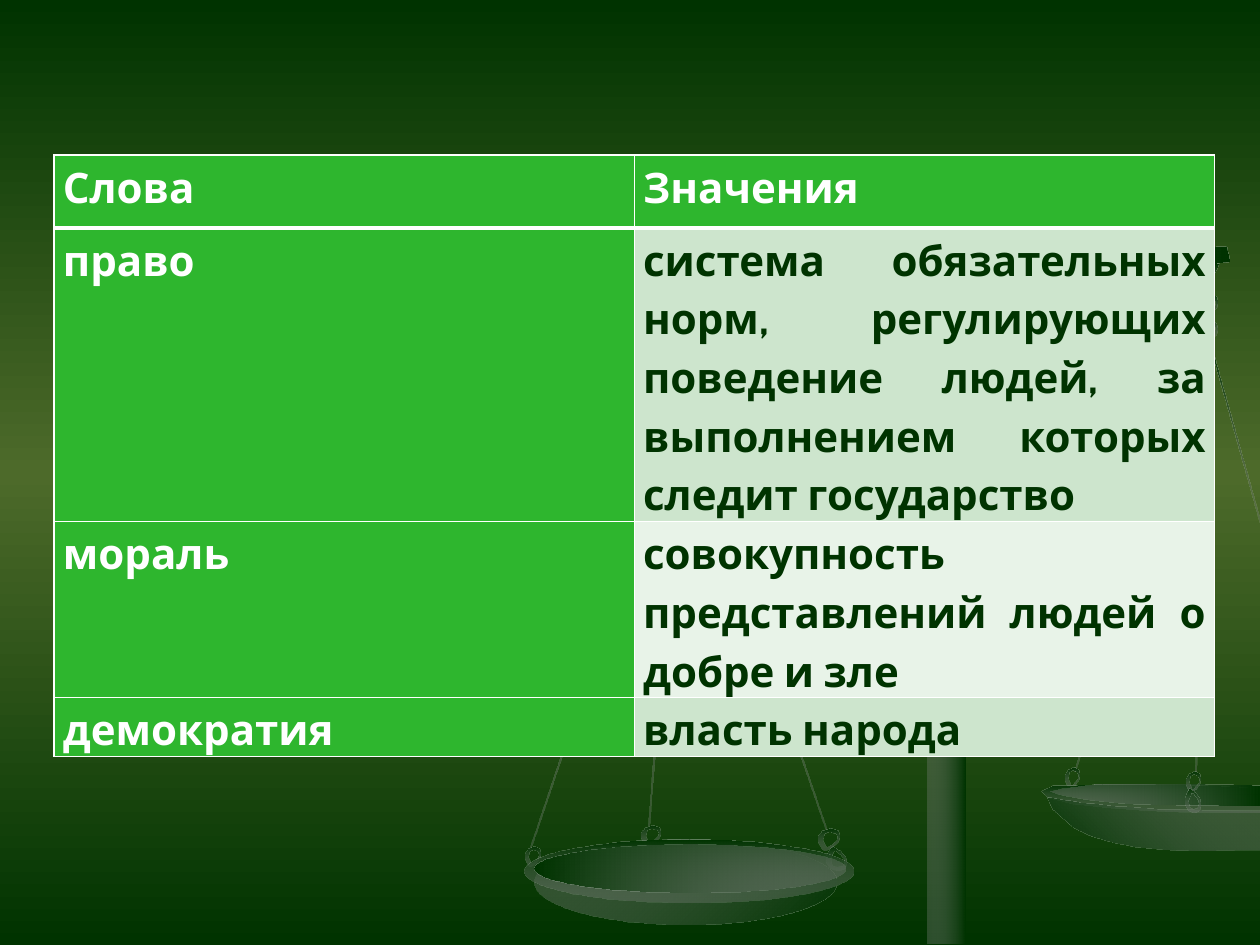
from lxml import etree
from pptx import Presentation
from pptx.dml.color import RGBColor
from pptx.enum.shapes import MSO_SHAPE as Shape
from pptx.enum.text import PP_ALIGN as Align
from pptx.oxml.ns import qn
from pptx.util import Inches, Pt

FOREST = RGBColor(0x00, 0x33, 0x00)
OLIVE = RGBColor(0x4D, 0x6A, 0x2A)
SILVER = RGBColor(0x79, 0x7F, 0x79)
GREEN = RGBColor(0x2E, 0xB6, 0x2E)
MINT = RGBColor(0xCD, 0xE5, 0xCD)
PALE = RGBColor(0xE8, 0xF3, 0xE8)
WHITE = RGBColor(0xFF, 0xFF, 0xFF)

# Gradients are (stops, angle); a stop is (position, colour, opacity), all in percent
DARK, SHINE = (FOREST, 100), (SILVER, 35)
DOWN = ([(0, *DARK), (100, *SHINE)], 90)
ACROSS = ([(0, *DARK), (100, *SHINE)], 0)
BACK = ([(0, *SHINE), (100, *DARK)], 0)
SLANT = ([(0, *SHINE), (100, *DARK)], 45)
RISE = ([(0, *DARK), (100, *SHINE)], 315)
SKY = ([(0, *DARK), (50, OLIVE, 100), (100, *DARK)], 90)

# Link of a chain in a unit square: outer edge, then the hole
LINK = [
    [(.3, 1), (.65, .82), (.9, .6), (1, .35), (.9, .1), (.55, 0), (.2, .1),
     (0, .35), (0, .6), (.15, .88)],
    [(.6, .17), (.8, .22), (.88, .37), (.85, .52), (.55, .76), (.38, .82),
     (.2, .5), (.28, .25), (.45, .17)],
]
ROWS = [
    ("Слова", "Значения"),
    ("право", "система обязательных норм, регулирующих поведение людей, "
              "за выполнением которых следит государство"),
    ("мораль", "совокупность представлений людей о добре и зле"),
    ("демократия", "власть народа"),
]


def write(para, text, *, font="Cabin", size=24, color=WHITE, bold=True,
          align=Align.JUSTIFY, spacing=1.15):
    para.alignment, para.line_spacing = align, spacing
    span = para.add_run()
    span.text = text
    span.font.name, span.font.size, span.font.bold = font, Pt(size), bold
    span.font.color.rgb = color


def paint(parent, gradient):
    """Replace the solid fill of a properties element with a gradient."""
    stops, angle = gradient
    fill = etree.Element(qn("a:gradFill"), rotWithShape="1")
    stop_list = etree.SubElement(fill, qn("a:gsLst"))
    for position, color, opacity in stops:
        stop = etree.SubElement(stop_list, qn("a:gs"), pos=str(position * 1000))
        tint = etree.SubElement(stop, qn("a:srgbClr"), val=str(color))
        if opacity < 100:
            etree.SubElement(tint, qn("a:alpha"), val=str(opacity * 1000))
    etree.SubElement(fill, qn("a:lin"), ang=str(angle * 60000), scaled="0")
    parent.replace(parent.find(qn("a:solidFill")), fill)


class Painter:
    """Draws on one page, on a grid of 10 columns by 7.5 rows."""

    def __init__(self, deck):
        self.column, self.row = deck.slide_width / 10, deck.slide_height / 7.5
        self.page = deck.slides.add_slide(deck.slide_layouts[6])

    def grid(self, *lengths):
        units = (self.column, self.row)
        return [round(length * units[i % 2]) for i, length in enumerate(lengths)]

    def background(self, gradient):
        self.page.background.fill.solid()
        paint(self.page._element.find(".//" + qn("p:bgPr")), gradient)

    def finish(self, shape, gradient):
        shape.shadow.inherit = False
        shape.line.fill.background()
        shape.fill.solid()
        paint(shape._element.spPr, gradient)
        return shape

    def preset(self, kind, box, gradient, turn=0):
        shape = self.page.shapes.add_shape(kind, *self.grid(*box))
        shape.rotation = turn
        return self.finish(shape, gradient)

    def rope(self, left, top, length, turn):
        self.preset(Shape.RECTANGLE, (left, top, 0.01, length), DOWN, turn)

    def outline(self, contours, gradient):
        first, *others = [[self.grid(*point) for point in c] for c in contours]
        builder = self.page.shapes.build_freeform(*first[0])
        builder.add_line_segments(first[1:], close=True)
        for contour in others:
            builder.move_to(*contour[0])
            builder.add_line_segments(contour[1:], close=True)
        self.finish(builder.convert_to_shape(), gradient)

    def link(self, left, top, width, height, flip=False):
        self.outline([[(left + x * width, top + (1 - y if flip else y) * height)
                       for x, y in contour] for contour in LINK], DOWN)

    def border(self, cell, widths):
        props = cell._tc.get_or_add_tcPr()
        for index, (side, width) in enumerate(widths.items()):
            line = etree.Element(qn("a:ln" + side), w=str(Pt(width)))
            fill = etree.SubElement(line, qn("a:solidFill"))
            etree.SubElement(fill, qn("a:srgbClr"), val=str(WHITE))
            props.insert(index, line)

    def table(self, rows, box, heights):
        table = self.page.shapes.add_table(
            len(rows), len(rows[0]), *self.grid(*box)).table
        for r, texts in enumerate(rows):
            table.rows[r].height = round(heights[r] * self.row)
            for c, text in enumerate(texts):
                cell = table.cell(r, c)
                key = r == 0 or c == 0
                cell.margin_left = cell.margin_right = Inches(0.07)
                cell.margin_top = cell.margin_bottom = 0
                cell.fill.solid()
                cell.fill.fore_color.rgb = GREEN if key else MINT if r % 2 else PALE
                write(cell.text_frame.paragraphs[0], text,
                      color=WHITE if key else FOREST)
                self.border(cell, {"L": 1, "R": 1, "T": 3 if r == 1 else 1,
                                   "B": 3 if r == 0 else 1})


def main():
    deck = Presentation()
    deck.slide_width, deck.slide_height = Inches(10), Inches(7.5)
    painter = Painter(deck)
    painter.background(SKY)

    # Ropes of the right and left pans
    for rope in [(9.04, 2.6, 3.6, 16.6), (9.53, 2.66, 3.47, 1.5),
                 (9.79, 2.64, 1.53, 344.6), (5.98, 3.15, 3.53, 341),
                 (4.79, 3.16, 3.68, 18.6), (5.27, 3.25, 3.31, 4.2)]:
        painter.rope(*rope)
    painter.link(8.46, 6.09, 0.11, 0.17)

    # Right pan, cut by the page edge: rim, bowl, inside
    painter.outline([[
        (10, 6.26), (9.58, 6.24), (8.75, 6.23), (8.36, 6.24), (8.27, 6.28),
        (8.32, 6.33), (8.52, 6.38), (8.94, 6.42), (9.35, 6.44), (10, 6.45)]], DOWN)
    painter.outline([[
        (8.31, 6.33), (8.35, 6.42), (8.52, 6.57), (8.65, 6.63), (8.82, 6.68),
        (9.03, 6.72), (9.28, 6.74), (9.57, 6.75), (10, 6.74), (10, 6.43),
        (9.53, 6.43), (9.18, 6.42), (8.86, 6.4), (8.57, 6.37)]], RISE)
    painter.outline([[
        (10, 6.24), (9.56, 6.23), (8.69, 6.23), (8.43, 6.26), (8.34, 6.28),
        (8.43, 6.31), (8.63, 6.34), (8.93, 6.37), (9.33, 6.38), (10, 6.39)]], BACK)

    # Beam with the hook at its right end
    painter.outline([[(9.5, 2.1), (9.67, 2.09), (9.62, 2.21), (9.62, 2.36),
                      (9.55, 2.36), (9.55, 2.22)]], DOWN)
    painter.link(9.51, 2.34, 0.15, 0.17)
    painter.link(9.5, 2.49, 0.16, 0.19, flip=True)
    painter.link(9.42, 6.12, 0.11, 0.17)
    painter.outline([[(9.73, 1.96), (9.76, 2.08), (5.25, 2.73), (5.24, 2.64),
                      (7.37, 2.12), (7.59, 2.09)]], BACK)

    # Left pan with its links: bowl, rim, inside
    painter.link(5.09, 6.55, 0.15, 0.16)
    painter.link(6.56, 6.72, 0.16, 0.19, flip=True)
    painter.link(4.17, 6.72, 0.12, 0.16)
    painter.preset(Shape.OVAL, (4.24, 6.66, 2.4, 0.68), SLANT)
    painter.preset(Shape.OVAL, (4.16, 6.66, 2.61, 0.5), DOWN)
    painter.preset(Shape.OVAL, (4.24, 6.7, 2.47, 0.38), ACROSS)
    painter.link(6.5, 6.58, 0.16, 0.17)
    painter.link(9.41, 6.26, 0.12, 0.19, flip=True)

    # Pillar
    painter.preset(Shape.RECTANGLE, (7.36, 3.08, 0.3, 4.41), BACK)

    # Words and their meanings
    painter.table(ROWS, (0.43, 1.23, 9.21, 4.72), (0.58, 2.31, 0.81, 0.4))
    deck.save("out.pptx")


if __name__ == "__main__":
    main()
